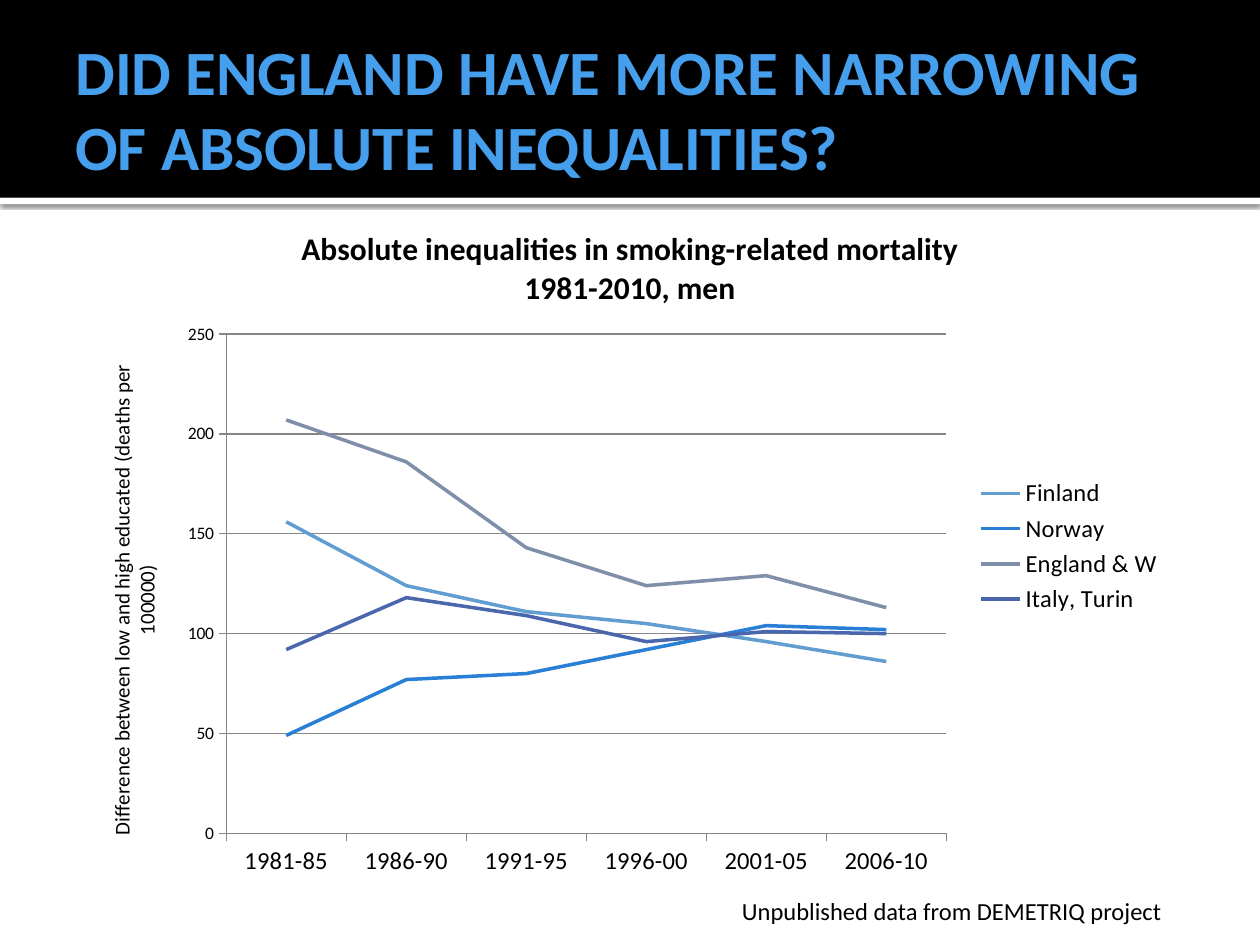
from typing import NamedTuple

import pptx
import pptx.chart.data
import pptx.dml.color
import pptx.enum.chart
import pptx.enum.shapes
import pptx.enum.text
import pptx.oxml
import pptx.oxml.ns
import pptx.util
from pptx.util import Inches

RGBColor = pptx.dml.color.RGBColor
Pt = pptx.util.Pt

BLACK = RGBColor(0x00, 0x00, 0x00)
WHITE = RGBColor(0xFF, 0xFF, 0xFF)
TITLE_BLUE = RGBColor(0x46, 0x9F, 0xED)
AXIS_GREY = RGBColor(0x86, 0x86, 0x86)
FINLAND_BLUE = RGBColor(0x62, 0x9D, 0xD1)
NORWAY_BLUE = RGBColor(0x29, 0x7F, 0xD5)
ENGLAND_GREY = RGBColor(0x7F, 0x8F, 0xA9)
ITALY_BLUE = RGBColor(0x4A, 0x66, 0xAC)
FONT = "Calibri"


class Country(NamedTuple):
    name: str
    color: RGBColor
    values: tuple[int, ...]


PERIODS = ("1981-85", "1986-90", "1991-95", "1996-00", "2001-05", "2006-10")
COUNTRIES = (
    Country("Finland", FINLAND_BLUE, (156, 124, 111, 105, 96, 86)),
    Country("Norway", NORWAY_BLUE, (49, 77, 80, 92, 104, 102)),
    Country("England & W", ENGLAND_GREY, (207, 186, 143, 124, 129, 113)),
    Country("Italy, Turin", ITALY_BLUE, (92, 118, 109, 96, 101, 100)),
)


def style_font(font, size: float, color: RGBColor = BLACK, bold: bool = False) -> None:
    font.name = FONT
    font.size = Pt(size)
    font.bold = bold
    font.color.rgb = color


def add_band(s, top: float, height: float, color: RGBColor):
    """Add a plain full-width rectangle."""
    sp = s.shapes.add_shape(pptx.enum.shapes.MSO_SHAPE.RECTANGLE,
                            0, Inches(top), Inches(10), Inches(height))
    sp.shadow.inherit = False
    sp.fill.solid()
    sp.fill.fore_color.rgb = color
    sp.line.fill.background()
    return sp


def add_drop_shadow(sp) -> None:
    effects = sp._element.spPr.find(pptx.oxml.ns.qn("a:effectLst"))
    effects.append(pptx.oxml.parse_xml(
        f'<a:outerShdw {pptx.oxml.ns.nsdecls("a")} blurRad="{Pt(2.5)}" dist="{Pt(0.8)}" '
        'dir="5400000" algn="t" rotWithShape="0">'
        '<a:srgbClr val="000000"><a:alpha val="60000"/></a:srgbClr></a:outerShdw>'))


def add_text(s, box: tuple[float, ...], text: str, size: float, color: RGBColor,
             bold: bool = False):
    tf = s.shapes.add_textbox(*map(Inches, box)).text_frame
    tf.word_wrap = True
    p = tf.paragraphs[0]
    p.text = text
    style_font(p.font, size, color, bold)
    return tf


def set_plot_area(chart, x: float, y: float, w: float, h: float) -> None:
    """Fix the inner plot area, in fractions of the chart."""
    plot_area = chart._chartSpace.chart.plotArea
    for old in plot_area.findall(pptx.oxml.ns.qn("c:layout")):
        plot_area.remove(old)
    sizes = "".join(f'<c:{tag} val="{value}"/>'
                    for tag, value in zip("xywh", (x, y, w, h)))
    plot_area.insert(0, pptx.oxml.parse_xml(
        f'<c:layout {pptx.oxml.ns.nsdecls("c")}><c:manualLayout>'
        '<c:layoutTarget val="inner"/><c:xMode val="edge"/><c:yMode val="edge"/>'
        f'{sizes}</c:manualLayout></c:layout>'))


def set_title(titled, text: str, size: float, bold: bool) -> None:
    """Title a chart or an axis; each line is a paragraph."""
    titled.has_title = True
    tf = (titled.chart_title if hasattr(titled, "chart_title") else titled.axis_title).text_frame
    tf.text = text
    for p in tf.paragraphs:
        style_font(p.font, size, bold=bold)


def style_axis(axis, size: float) -> None:
    style_font(axis.tick_labels.font, size)
    axis.major_tick_mark = pptx.enum.chart.XL_TICK_MARK.OUTSIDE
    axis.minor_tick_mark = pptx.enum.chart.XL_TICK_MARK.NONE
    axis.format.line.color.rgb = AXIS_GREY
    axis.format.line.width = Pt(0.75)


def add_mortality_chart(s) -> None:
    data = pptx.chart.data.CategoryChartData()
    data.categories = PERIODS
    for country in COUNTRIES:
        data.add_series(country.name, country.values)
    chart = s.shapes.add_chart(pptx.enum.chart.XL_CHART_TYPE.LINE, Inches(0.67), Inches(1.62),
                               Inches(8.66), Inches(5.43), data).chart
    style_font(chart.font, 10)
    set_title(chart, "Absolute inequalities in smoking-related mortality\n1981-2010, men", 18, True)
    set_plot_area(chart, 0.13, 0.19, 0.66, 0.73)

    style_axis(chart.category_axis, 14)
    axis = chart.value_axis
    style_axis(axis, 10)
    axis.minimum_scale, axis.maximum_scale, axis.major_unit = 0, 250, 50
    axis.has_major_gridlines = True
    axis.major_gridlines.format.line.color.rgb = AXIS_GREY
    axis.major_gridlines.format.line.width = Pt(0.75)
    set_title(axis, "Difference between low and high educated (deaths per 100000)", 12, False)

    chart.has_legend = True
    chart.legend.position = pptx.enum.chart.XL_LEGEND_POSITION.RIGHT
    chart.legend.include_in_layout = False
    style_font(chart.legend.font, 14)

    chart.plots[0].vary_by_categories = False
    for series, country in zip(chart.plots[0].series, COUNTRIES):
        series.smooth = False
        series.marker.style = pptx.enum.chart.XL_MARKER_STYLE.NONE
        series.format.line.color.rgb = country.color
        series.format.line.width = Pt(2)


def main() -> None:
    prs = pptx.Presentation()
    prs.slide_width, prs.slide_height = Inches(10), Inches(7.5)
    s = prs.slides.add_slide(prs.slide_layouts[6])

    add_drop_shadow(add_band(s, 1.57, 0.05, WHITE))
    add_band(s, 0, 1.57, BLACK)
    tf = add_text(s, (0.5, 0.17, 9.22, 1.37),
                  "DID ENGLAND HAVE MORE NARROWING OF ABSOLUTE INEQUALITIES?",
                  36, TITLE_BLUE, bold=True)
    tf.vertical_anchor = pptx.enum.text.MSO_ANCHOR.MIDDLE
    tf.margin_right = Inches(0.05)
    add_text(s, (5.79, 7.06, 3.78, 0.34), "Unpublished data from DEMETRIQ project", 14, BLACK)
    add_mortality_chart(s)

    prs.save("out.pptx")


if __name__ == "__main__":
    main()
